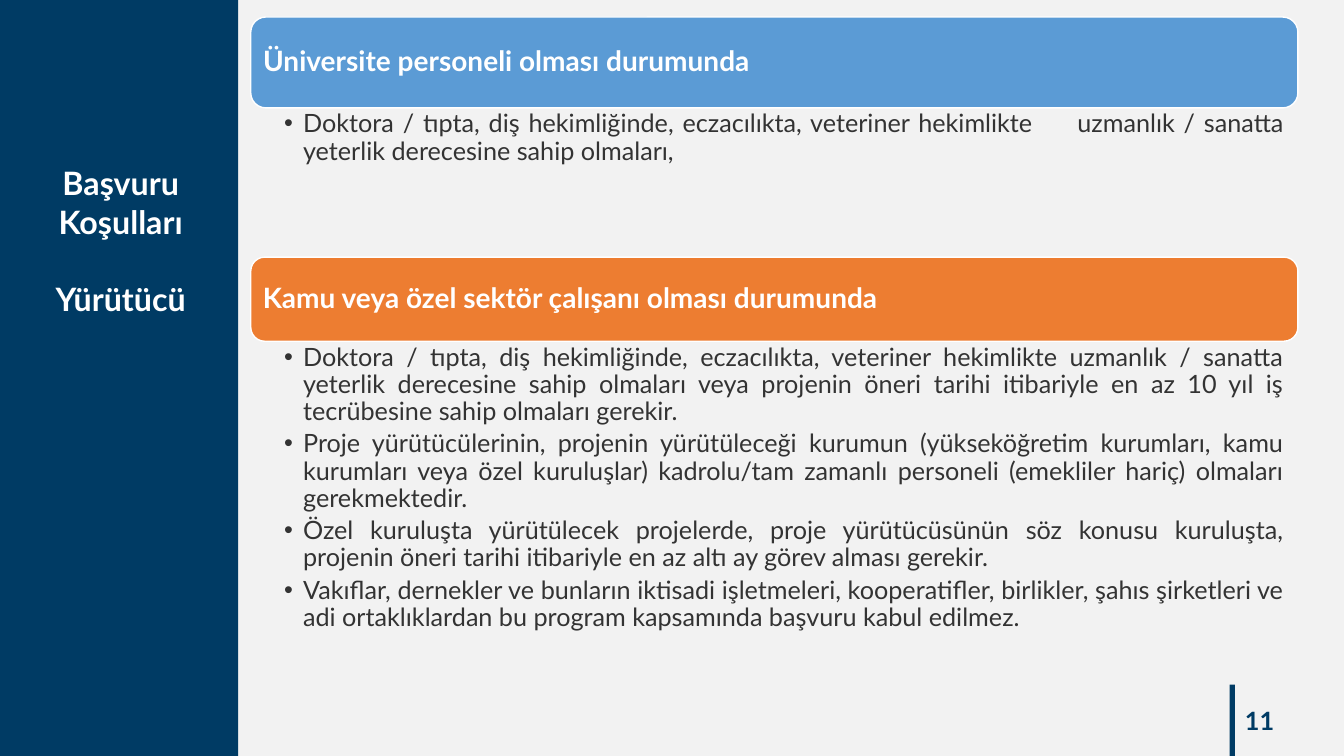
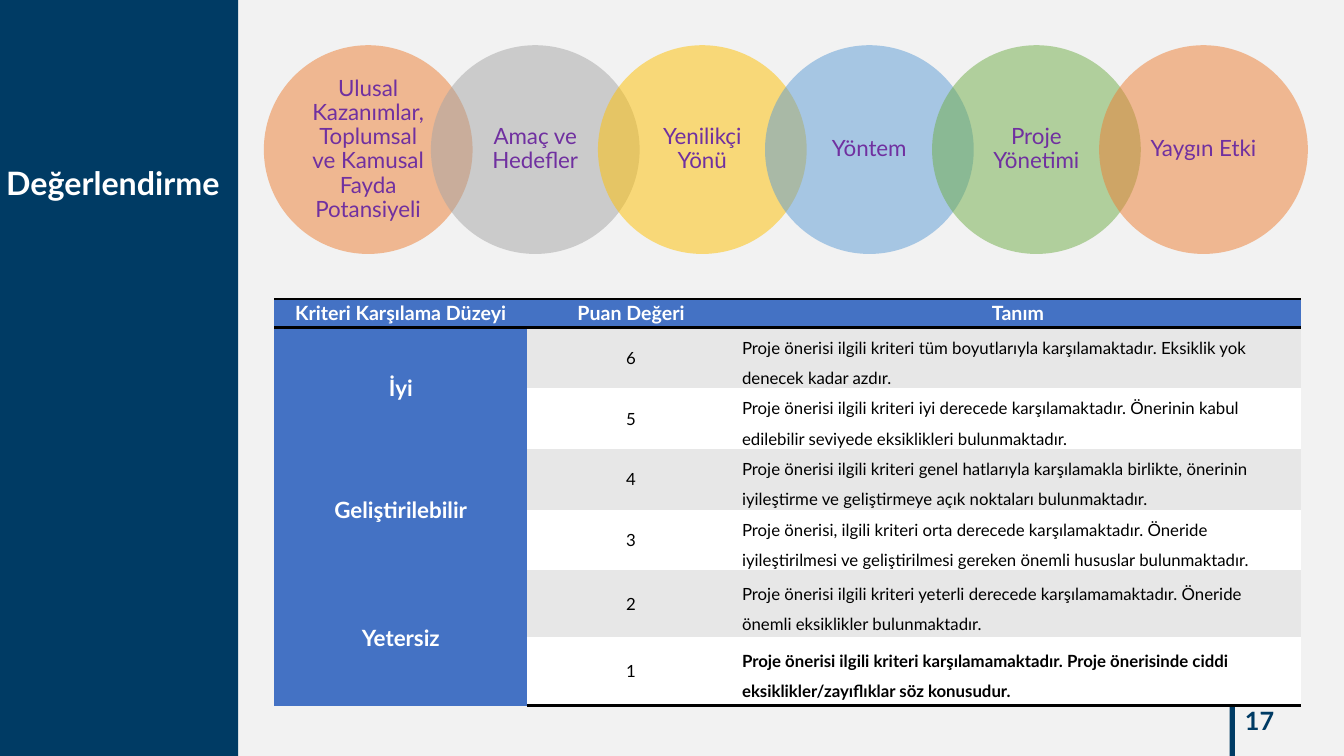
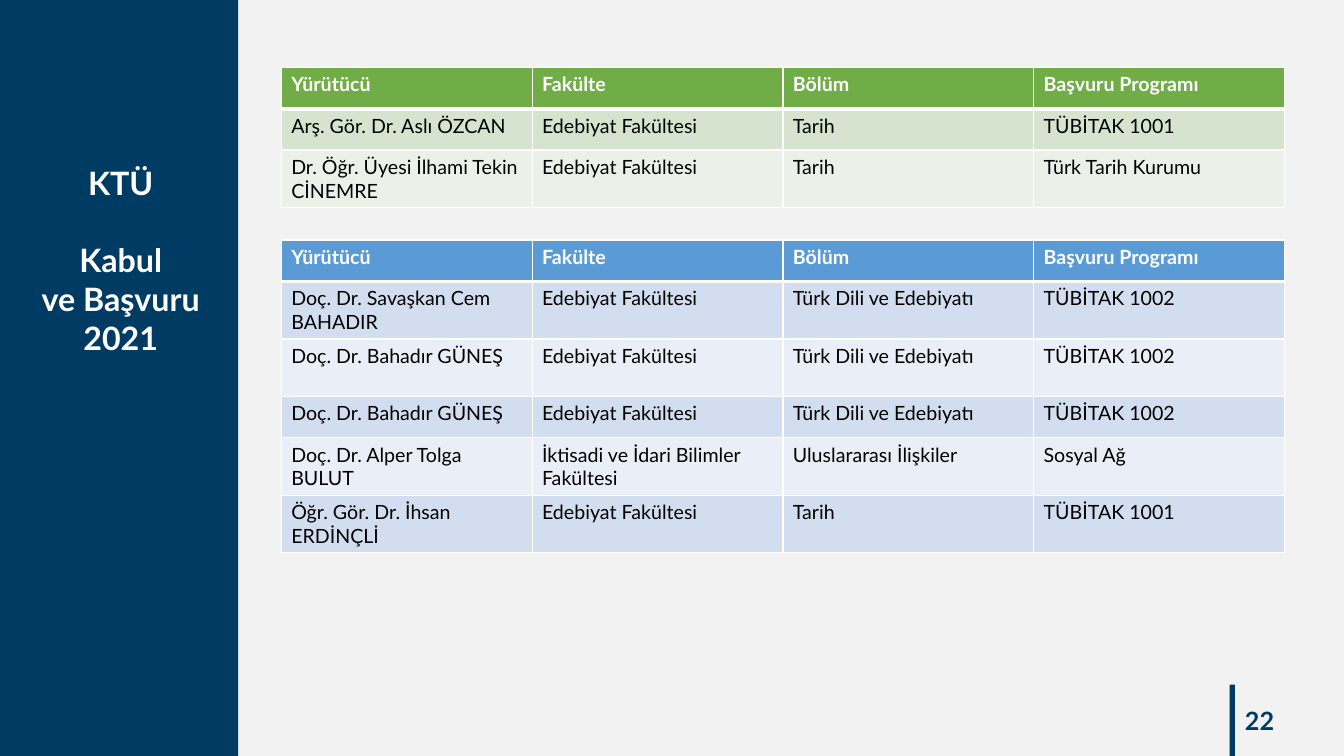
from lxml.etree import SubElement
from pptx import Presentation
from pptx.dml.color import RGBColor
from pptx.enum.shapes import MSO_SHAPE as Preset
from pptx.enum.text import MSO_ANCHOR as Anchor, PP_ALIGN as Align
from pptx.oxml.ns import qn
from pptx.util import Cm, Pt

NAVY, WHITE, BLACK, PAPER = "003B64", "FFFFFF", "000000", "F2F2F2"
BODY_TEXT, PURPLE = "333333", "7030A0"
ORANGE, GRAY, YELLOW = "ED7D31", "A5A5A5", "FFC000"
BLUE, GREEN, ROYAL, BAND = "5B9BD5", "70AD47", "4472C4", "E7E7E7"
FONT = "Lato"
NO_TABLE_STYLE = "{2D5ABB26-0587-4C30-8999-92F81FD0307C}"


def rgb(code):
    return RGBColor.from_string(code)


class Deck:
    """Holds the shared style and the slide being built."""

    def __init__(self):
        self.prs = Presentation()
        self.prs.slide_width, self.prs.slide_height = Cm(33.87), Cm(19.05)
        self.slide = None

    def new_slide(self, number, title_blocks, title_left=0.71, title_width=4.67):
        """Start a slide; title blocks are set one empty line apart."""
        self.slide = self.prs.slides.add_slide(self.prs.slide_layouts[6])
        background = self.slide.background.fill
        background.solid()
        background.fore_color.rgb = rgb(PAPER)
        # Side band and page number
        self.shape(Preset.RECTANGLE, 0, 0, 6, 19.05, NAVY)
        self.shape(Preset.RECTANGLE, 30.99, 17.25, 0.13, 1.8, NAVY)
        page = self.textbox(24.74, 17.65, 7.62, 1.02, (0.25, 0.13, 0.25, 0.13))
        page.vertical_anchor = Anchor.MIDDLE
        self.add_text(page, str(number), 18, NAVY, True, Align.RIGHT)
        # Title on the side band
        title = self.textbox(title_left, 3.99, title_width, 6, (0, 0.13, 0, 0.13))
        for block_no, block in enumerate(title_blocks):
            for line_no, line in enumerate(block):
                paragraph = self.add_text(title, line, 23, WHITE, True, Align.CENTER)
                if block_no and not line_no:
                    paragraph.space_before = Pt(27.6)

    def shape(self, preset, left, top, width, height, fill, line=None, alpha=None):
        shape = self.slide.shapes.add_shape(
            preset, Cm(left), Cm(top), Cm(width), Cm(height))
        shape.shadow.inherit = False
        shape.fill.solid()
        shape.fill.fore_color.rgb = rgb(fill)
        if alpha:
            color = shape._element.spPr.find(qn("a:solidFill"))[0]
            SubElement(color, qn("a:alpha"), val=str(alpha * 1000))
        if line:
            shape.line.color.rgb = rgb(line)
            shape.line.width = Pt(1)
        else:
            shape.line.fill.background()
        return shape

    def frame(self, shape, insets):
        frame = shape.text_frame
        frame.word_wrap = True
        (frame.margin_left, frame.margin_top,
         frame.margin_right, frame.margin_bottom) = map(Cm, insets)
        return frame

    def textbox(self, left, top, width, height, insets):
        box = self.slide.shapes.add_textbox(
            Cm(left), Cm(top), Cm(width), Cm(height))
        return self.frame(box, insets)

    def add_text(self, frame, text, size, color, bold=False, align=Align.LEFT,
                 spacing=None):
        """Fill the first empty paragraph, or add one."""
        paragraph = frame.paragraphs[-1]
        if paragraph.runs:
            paragraph = frame.add_paragraph()
        paragraph.alignment = align
        if spacing:
            paragraph.line_spacing = spacing
        run = paragraph.add_run()
        run.text = text
        run.font.name, run.font.size, run.font.bold = FONT, Pt(size), bold
        run.font.color.rgb = rgb(color)
        return paragraph

    def section(self, heading, color, top, height, bullets, bullets_height):
        """Coloured heading bar with a bullet list below it."""
        bar = self.shape(Preset.ROUNDED_RECTANGLE, 6.32, top, 26.39, height,
                         color, WHITE)
        frame = self.frame(bar, (0.2, 0.2, 0.2, 0.2))
        frame.vertical_anchor = Anchor.MIDDLE
        self.add_text(frame, heading, 20, WHITE, True, spacing=0.9)
        body = self.textbox(6.32, top + height, 26.39, bullets_height,
                            (0.84, 0.08, 0.36, 0.08))
        for bullet in bullets:
            paragraph = self.add_text(body, bullet, 18, BODY_TEXT,
                                      align=Align.JUSTIFY, spacing=0.9)
            paragraph.space_after = Pt(3.6)
            props = paragraph._p.get_or_add_pPr()
            props.set("marL", str(Cm(0.48)))
            props.set("indent", str(-Cm(0.48)))
            SubElement(props, qn("a:buFont"), typeface="Arial")
            SubElement(props, qn("a:buChar"), char="•")
            if "\t" in bullet:
                tabs = SubElement(props, qn("a:tabLst"))
                SubElement(tabs, qn("a:tab"), pos=str(Cm(19.5)), algn="l")

    def circle(self, text, color, left, top, diameter):
        circle = self.shape(Preset.OVAL, left, top, diameter, diameter, color,
                            alpha=50)
        frame = self.frame(circle, (0.28, 0.05, 0.28, 0.05))
        frame.vertical_anchor = Anchor.MIDDLE
        self.add_text(frame, text, 16, PURPLE, align=Align.CENTER, spacing=0.9)

    def table(self, left, top, widths, heights):
        table = self.slide.shapes.add_table(
            len(heights), len(widths), Cm(left), Cm(top),
            Cm(sum(widths)), Cm(sum(heights))).table
        table._tbl.tblPr.find(qn("a:tableStyleId")).text = NO_TABLE_STYLE
        table.first_row = table.horz_banding = False
        for column, width in zip(table.columns, widths):
            column.width = Cm(width)
        for row, height in zip(table.rows, heights):
            row.height = Cm(height)
        return table

    def cell(self, cell, fill, borders, margins, anchor):
        """Borders map a side (L, R, T, B, in this order) to colour and width."""
        props = cell._tc.get_or_add_tcPr()
        for side, (color, width) in borders.items():
            line = SubElement(props, qn("a:ln" + side), w=str(Pt(width)))
            solid = SubElement(line, qn("a:solidFill"))
            SubElement(solid, qn("a:srgbClr"), val=color)
        cell.fill.solid()
        cell.fill.fore_color.rgb = rgb(fill)
        cell.margin_left = cell.margin_right = Cm(margins[0])
        cell.margin_top = cell.margin_bottom = Cm(margins[1])
        cell.vertical_anchor = anchor

    def score_table(self, headers, levels, descriptions):
        """Levels in the first column each span two scores."""
        heights = [0.71] + [1.53] * 4 + [1.68, 1.73]
        table = self.table(6.91, 7.54, [6.38, 5.23, 14.27], heights)
        last = len(descriptions)
        rule = (BLACK, 2)
        for row in range(last + 1):
            borders = {"T": rule, "B": rule} if row == 0 else {}
            if row == last:
                borders = {"B": rule}
            for column in range(3):
                fill = BAND if row % 2 else WHITE
                if row == 0 or column == 0:
                    fill = ROYAL
                self.cell(table.cell(row, column), fill, borders, (0.18, 0),
                          Anchor.MIDDLE)
        for column, header in enumerate(headers):
            self.add_text(table.cell(0, column).text_frame, header, 14, WHITE,
                          True, Align.CENTER)
        for index, level in enumerate(levels):
            first = table.cell(2 * index + 1, 0)
            first.merge(table.cell(2 * index + 2, 0))
            self.add_text(first.text_frame, level, 16, WHITE, True, Align.CENTER)
        for row, description in enumerate(descriptions, 1):
            self.add_text(table.cell(row, 1).text_frame, str(last + 1 - row), 12,
                          BLACK, align=Align.CENTER)
            self.add_text(table.cell(row, 2).text_frame, description, 12, BLACK,
                          row == last, spacing=1.5)

    def project_table(self, top, header_color, bands, heights, rows):
        table = self.table(7.09, top, [6.32] * 4, heights)
        headers = ["Yürütücü", "Fakülte", "Bölüm", "Başvuru Programı"]
        for row, texts in enumerate([headers] + rows):
            is_header = row == 0
            borders = dict.fromkeys("LRTB", (WHITE, 1))
            if is_header:
                borders["B"] = (WHITE, 3)
            elif row == 1:
                borders["T"] = (WHITE, 3)
            fill = header_color if is_header else bands[(row - 1) % 2]
            for column, text in enumerate(texts):
                cell = table.cell(row, column)
                self.cell(cell, fill, borders, (0.25, 0.13), Anchor.TOP)
                self.add_text(cell.text_frame, text, 14,
                              WHITE if is_header else BLACK, is_header)


def main():
    deck = Deck()

    # Applicant conditions
    deck.new_slide(11, [["Başvuru Koşulları"], ["Yürütücü"]])
    deck.section("Üniversite personeli olması durumunda", BLUE, 0.43, 2.29, [
        "Doktora / tıpta, diş hekimliğinde, eczacılıkta, veteriner hekimlikte "
        "\tuzmanlık / sanatta yeterlik derecesine sahip olmaları,",
    ], 2.44)
    deck.section("Kamu veya özel sektör çalışanı olması durumunda", ORANGE, 6.48, 2.12, [
        "Doktora / tıpta, diş hekimliğinde, eczacılıkta, veteriner hekimlikte "
        "uzmanlık / sanatta yeterlik derecesine sahip olmaları veya projenin öneri "
        "tarihi itibariyle en az 10 yıl iş tecrübesine sahip olmaları gerekir.",
        "Proje yürütücülerinin, projenin yürütüleceği kurumun (yükseköğretim "
        "kurumları, kamu kurumları veya özel kuruluşlar) kadrolu/tam zamanlı "
        "personeli (emekliler hariç) olmaları gerekmektedir.",
        "Özel kuruluşta yürütülecek projelerde, proje yürütücüsünün söz konusu "
        "kuruluşta, projenin öneri tarihi itibariyle en az altı ay görev alması "
        "gerekir.",
        "Vakıflar, dernekler ve bunların iktisadi işletmeleri, kooperatifler, "
        "birlikler, şahıs şirketleri ve adi ortaklıklardan bu program kapsamında "
        "başvuru kabul edilmez.",
    ], 7.67)

    # Evaluation criteria and scores
    deck.new_slide(17, [["Değerlendirme"]], title_left=0.1, title_width=5.5)
    criteria = [
        ("Ulusal Kazanımlar, Toplumsal ve Kamusal Fayda Potansiyeli", ORANGE),
        ("Amaç ve Hedefler", GRAY),
        ("Yenilikçi Yönü", YELLOW),
        ("Yöntem", BLUE),
        ("Proje Yönetimi", GREEN),
        ("Yaygın Etki", ORANGE),
    ]
    for index, (criterion, color) in enumerate(criteria):
        deck.circle(criterion, color, 6.65 + 4.21 * index, 1.14, 5.26)
    deck.score_table(
        ["Kriteri Karşılama Düzeyi", "Puan Değeri", "Tanım"],
        ["İyi", "Geliştirilebilir", "Yetersiz"],
        [
            "Proje önerisi ilgili kriteri tüm boyutlarıyla karşılamaktadır. "
            "Eksiklik yok denecek kadar azdır.",
            "Proje önerisi ilgili kriteri iyi derecede karşılamaktadır. Önerinin "
            "kabul edilebilir seviyede eksiklikleri bulunmaktadır.",
            "Proje önerisi ilgili kriteri genel hatlarıyla karşılamakla birlikte, "
            "önerinin iyileştirme ve geliştirmeye açık noktaları bulunmaktadır.",
            "Proje önerisi, ilgili kriteri orta derecede karşılamaktadır. Öneride "
            "iyileştirilmesi ve geliştirilmesi gereken önemli hususlar bulunmaktadır.",
            "Proje önerisi ilgili kriteri yeterli derecede karşılamamaktadır. "
            "Öneride önemli eksiklikler bulunmaktadır.",
            "Proje önerisi ilgili kriteri karşılamamaktadır. Proje önerisinde ciddi "
            "eksiklikler/zayıflıklar söz konusudur.",
        ])

    # Accepted projects and applications
    deck.new_slide(22, [["KTÜ"], ["Kabul", "ve Başvuru", "2021"]])
    one_line, two_lines = 1.04, 1.45
    letters, turkish = "Edebiyat Fakültesi", "Türk Dili ve Edebiyatı"
    deck.project_table(1.7, GREEN, ["D5E3CF", "EBF1E9"], [one_line, one_line, two_lines], [
        ["Arş. Gör. Dr. Aslı ÖZCAN", letters, "Tarih", "TÜBİTAK 1001"],
        ["Dr. Öğr. Üyesi İlhami Tekin CİNEMRE", letters, "Tarih", "Türk Tarih Kurumu"],
    ])
    application_heights = [one_line, two_lines, two_lines, one_line, two_lines, two_lines]
    deck.project_table(6.05, BLUE, ["D2DEEF", "EAEFF7"], application_heights, [
        ["Doç. Dr. Savaşkan Cem BAHADIR", letters, turkish, "TÜBİTAK 1002"],
        ["Doç. Dr. Bahadır GÜNEŞ", letters, turkish, "TÜBİTAK 1002"],
        ["Doç. Dr. Bahadır GÜNEŞ", letters, turkish, "TÜBİTAK 1002"],
        ["Doç. Dr. Alper Tolga BULUT", "İktisadi ve İdari Bilimler Fakültesi",
         "Uluslararası İlişkiler", "Sosyal Ağ"],
        ["Öğr. Gör. Dr. İhsan ERDİNÇLİ", letters, "Tarih", "TÜBİTAK 1001"],
    ])

    deck.prs.save("out.pptx")


if __name__ == "__main__":
    main()
